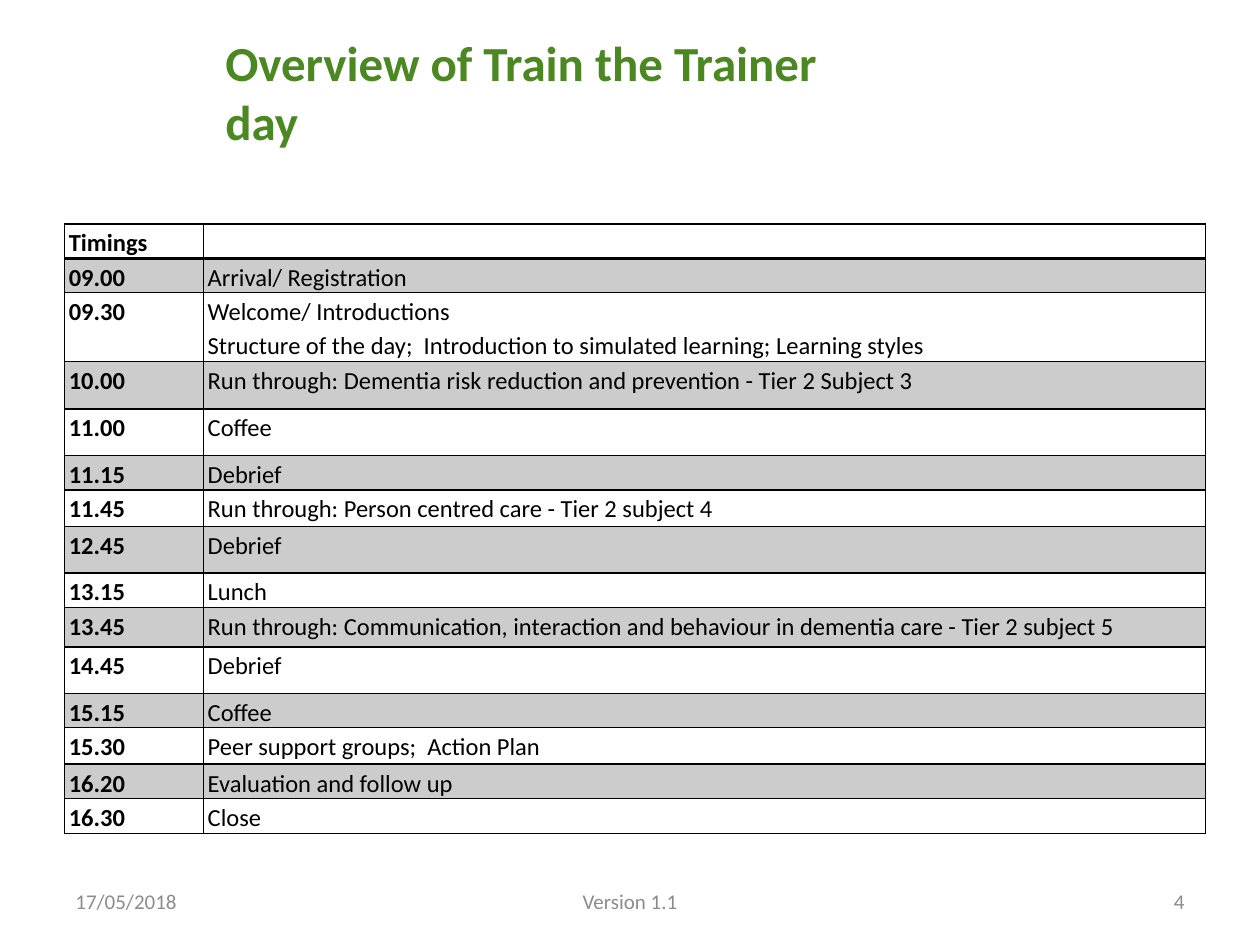
from pptx import Presentation
from pptx.util import Pt
from pptx.dml.color import RGBColor
from pptx.enum.text import PP_ALIGN as Align, MSO_ANCHOR as Anchor
from pptx.oxml.ns import qn
from lxml.etree import SubElement as Sub

LINE = 19.6  # height of one table line
ROWS = [  # time, lines of text, row height
    ("Timings", [], LINE),
    ("09.00", ["Arrival/ Registration"], LINE),
    ("09.30", ["Welcome/ Introductions",
               "Structure of the day;  Introduction to simulated learning; Learning styles"], 2 * LINE),
    ("10.00", ["Run through: Dementia risk reduction and prevention - Tier 2 Subject 3"], 27.4),
    ("11.00", ["Coffee"], 26.6),
    ("11.15", ["Debrief"], LINE),
    ("11.45", ["Run through: Person centred care - Tier 2 subject 4"], 20.9),
    ("12.45", ["Debrief"], 26.6),
    ("13.15", ["Lunch"], LINE),
    ("13.45", ["Run through: Communication, interaction and behaviour in dementia care"
               " - Tier 2 subject 5"], 22.5),
    ("14.45", ["Debrief"], 26.6),
    ("15.15", ["Coffee"], LINE),
    ("15.30", ["Peer support groups;  Action Plan"], 20.9),
    ("16.20", ["Evaluation and follow up"], LINE),
    ("16.30", ["Close"], 20),
]
COLS = (79.4, 572.6)


def color(code):
    return RGBColor.from_string(code)


def write(para, text, size, code, bold=False, align=Align.LEFT):
    para.alignment = align
    run = para.add_run()
    run.text = text
    form = {"name": "Calibri", "size": Pt(size), "bold": bold}
    for key, val in form.items():
        setattr(run.font, key, val)
    run.font.color.rgb = color(code)


def add_text(slide, box, text, size, code, bold=False, align=Align.LEFT, anchor=Anchor.MIDDLE):
    frame = slide.shapes.add_textbox(*map(Pt, box)).text_frame
    frame.word_wrap = True
    frame.vertical_anchor = anchor
    write(frame.paragraphs[0], text, size, code, bold, align)


def add_edges(cell, base):
    props = cell._tc.get_or_add_tcPr()
    for side, width in {"L": 1, "R": 1, "T": 1, "B": base}.items():
        edge = Sub(props, qn("a:ln" + side), w=str(Pt(width)))
        Sub(Sub(edge, qn("a:solidFill")), qn("a:srgbClr"), val="000000")


def shade(cell, dark):
    if not dark:
        cell.fill.background()
        return
    cell.fill.solid()
    cell.fill.fore_color.rgb = color("000000")
    tone = cell._tc.tcPr.find(".//" + qn("a:solidFill") + "[last()]")
    tone = cell._tc.tcPr.find(qn("a:solidFill")) if tone is None else tone
    Sub(cell._tc.tcPr.find(qn("a:solidFill"))[0], qn("a:alpha"), val="20000")


def fill_cell(cell, lines, bold, align, dark, base):
    form = {"margin_left": Pt(2.4), "margin_right": Pt(2.4), "margin_top": 0, "margin_bottom": 0}
    for key, val in form.items():
        setattr(cell, key, val)
    add_edges(cell, base)
    shade(cell, dark)
    frame = cell.text_frame
    for num, text in enumerate(lines):
        para = frame.add_paragraph() if num else frame.paragraphs[0]
        para.line_spacing = 1.15
        write(para, text, 14, "000000", bold, align)
    if not lines:  # keeps the empty cell as low as its row
        Sub(frame.paragraphs[0]._p, qn("a:endParaRPr"), sz="1400")


def add_plan(slide):
    high = sum(row[2] for row in ROWS)
    table = slide.shapes.add_table(len(ROWS), 2, Pt(36.9), Pt(128), Pt(sum(COLS)), Pt(high)).table
    table.first_row = table.horz_banding = False
    for col, width in zip(table.columns, COLS):
        col.width = Pt(width)
    for num, (time, lines, height) in enumerate(ROWS):
        table.rows[num].height = Pt(height)
        dark = num % 2 == 1
        base = 1 if num else 2
        align = Align.JUSTIFY if 1 <= num <= 12 else Align.LEFT
        fill_cell(table.cell(num, 0), [time], True, align, dark, base)
        fill_cell(table.cell(num, 1), lines, False, Align.LEFT, dark, base)


def main():
    deck = Presentation()
    deck.slide_width, deck.slide_height = Pt(720), Pt(540)
    slide = deck.slides.add_slide(deck.slide_layouts[6])

    # Timetable
    add_plan(slide)

    # Title
    add_text(slide, (121.7, 15.1, 357, 90), "Overview of Train the Trainer day",
             28, "4C8822", True, anchor=Anchor.TOP)

    # Footer
    for left, width, text, align in (
        (36, 168, "17/05/2018", Align.LEFT),
        (246, 228, "Version 1.1", Align.CENTER),
        (516, 168, "4", Align.RIGHT),
    ):
        add_text(slide, (left, 500.5, width, 28.8), text, 12, "8C8C8C", align=align)

    deck.save("out.pptx")


if __name__ == "__main__":
    main()
